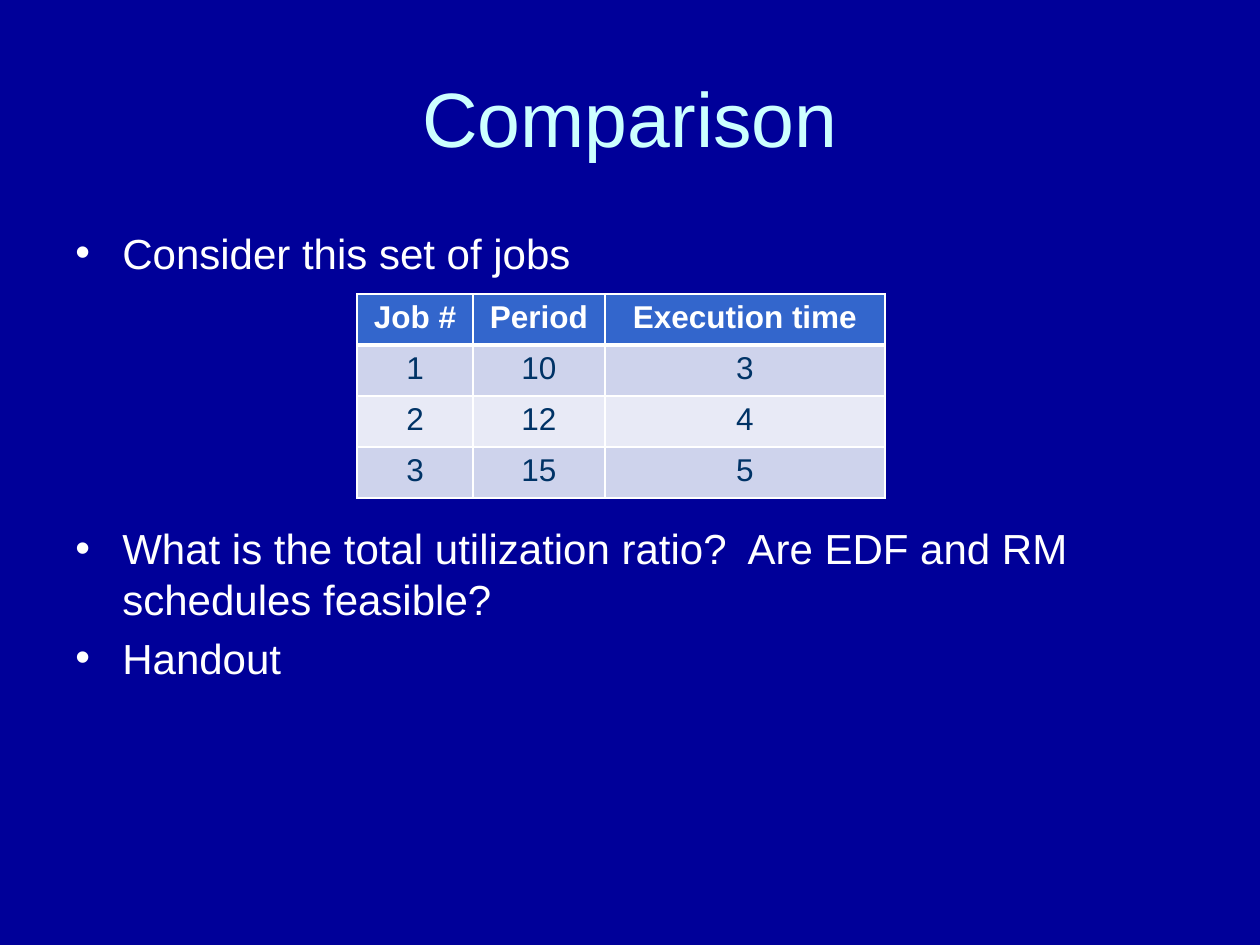
from lxml import etree
from pptx import Presentation
from pptx import util as u
from pptx.dml.color import RGBColor
from pptx.enum import text
from pptx.oxml.ns import qn

NAVY = RGBColor(0x00, 0x00, 0x99)
ICE = RGBColor(0xCC, 0xFF, 0xFF)
WHITE = RGBColor(0xFF, 0xFF, 0xFF)
BLUE = RGBColor(0x33, 0x66, 0xCC)
INK = RGBColor(0x00, 0x33, 0x66)
BANDS = (RGBColor(0xCE, 0xD3, 0xEC), RGBColor(0xE8, 0xEA, 0xF6))

JOBS = [
    ("Job #", "Period", "Execution time"),
    ("1", "10", "3"),
    ("2", "12", "4"),
    ("3", "15", "5"),
]
BULLETS = [
    ("Consider this set of jobs", 0),
    ("What is the total utilization ratio?  Are EDF and RM schedules feasible?", 140),
    ("Handout", 5),
]


def px(length):
    return u.Emu(length * u.Inches(1) // 126)


def write(para, words, size=24, color=WHITE, bold=False, align=text.PP_ALIGN.LEFT):
    para.alignment = align
    span = para.add_run()
    span.text = words
    span.font.name = "Arial"
    span.font.size = u.Pt(size)
    span.font.bold = bold
    span.font.color.rgb = color


def add_border(cell, side, points):
    line = etree.SubElement(cell._tc.get_or_add_tcPr(), qn(f"a:ln{side}"), w=str(u.Pt(points)))
    fill = etree.SubElement(line, qn("a:solidFill"))
    etree.SubElement(fill, qn("a:srgbClr"), val=str(WHITE))


class SlideBuilder:
    def __init__(self, deck, background):
        self.page = deck.slides.add_slide(deck.slide_layouts[5])
        self.page.background.fill.solid()
        self.page.background.fill.fore_color.rgb = background

    def title(self, words, left, top, width, height):
        box = self.page.shapes.title
        box.left, box.top, box.width, box.height = map(px, (left, top, width, height))
        box.text_frame.vertical_anchor = text.MSO_ANCHOR.MIDDLE
        write(box.text_frame.paragraphs[0], words, size=44, color=ICE,
              align=text.PP_ALIGN.CENTER)

    def bullets(self, items, left, top, width, height, indent):
        box = self.page.shapes.add_textbox(*map(px, (left, top, width, height)))
        frame = box.text_frame
        frame.word_wrap = True
        for index, (words, gap) in enumerate(items):
            para = frame.add_paragraph() if index else frame.paragraphs[0]
            para.space_before = u.Pt(gap)
            write(para, words)
            props = para._p.get_or_add_pPr()
            props.set("marL", str(px(indent)))
            props.set("indent", str(-px(indent)))
            etree.SubElement(props, qn("a:buFont"), typeface="Arial")
            etree.SubElement(props, qn("a:buChar"), char="•")

    def table(self, rows, left, top, widths, row_height):
        size = (left, top, sum(widths), row_height * len(rows))
        grid = self.page.shapes.add_table(len(rows), len(widths), *map(px, size)).table
        for column, width in zip(grid.columns, widths):
            column.width = px(width)
        for r, row in enumerate(rows):
            grid.rows[r].height = px(row_height)
            header = r == 0
            for c, words in enumerate(row):
                cell = grid.cell(r, c)
                write(cell.text_frame.paragraphs[0], words, size=18, bold=header,
                      color=WHITE if header else INK, align=text.PP_ALIGN.CENTER)
                for side in "LRTB":
                    thick = (r, side) in ((0, "B"), (1, "T"))
                    add_border(cell, side, 3 if thick else 1)
                cell.fill.solid()
                cell.fill.fore_color.rgb = BLUE if header else BANDS[(r - 1) % 2]


def main():
    deck = Presentation()
    deck.slide_width, deck.slide_height = px(1260), px(945)
    slide = SlideBuilder(deck, NAVY)
    slide.title("Comparison", 63, 38, 1134, 158)
    slide.bullets(BULLETS, 63, 221, 1134, 624, indent=47)
    slide.table(JOBS, 357, 294, (116, 132, 280), row_height=51)
    deck.save("out.pptx")


if __name__ == "__main__":
    main()
